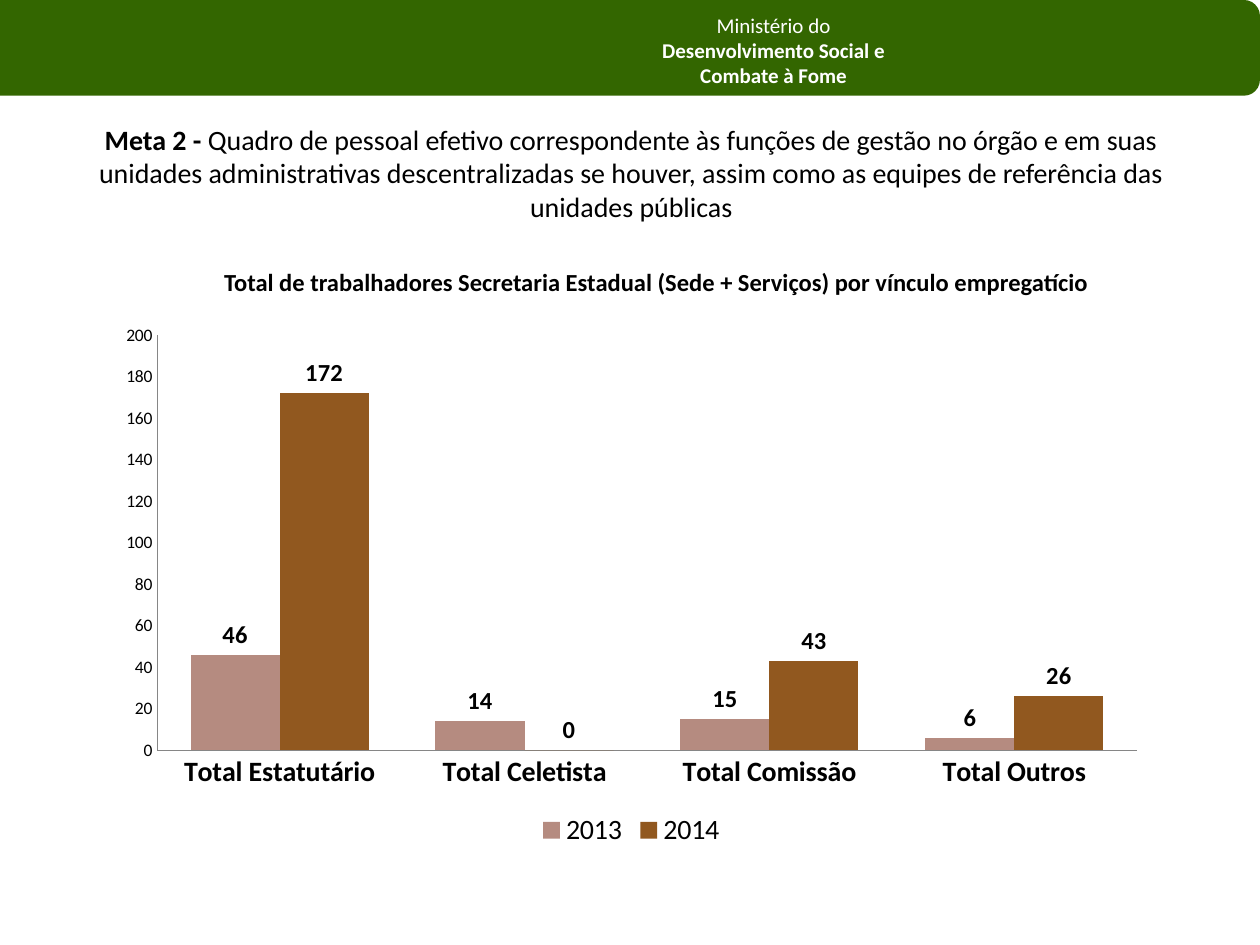
from lxml import etree
from pptx import Presentation
from pptx.chart.data import CategoryChartData
from pptx.dml.color import RGBColor
from pptx.enum.chart import XL_CHART_TYPE, XL_LABEL_POSITION, XL_LEGEND_POSITION, XL_TICK_MARK
from pptx.enum.shapes import MSO_SHAPE
from pptx.enum.text import MSO_ANCHOR, PP_ALIGN
from pptx.oxml.ns import qn
from pptx.util import Inches, Pt

COLUMN = XL_CHART_TYPE.COLUMN_CLUSTERED
OUTSIDE_END = XL_LABEL_POSITION.OUTSIDE_END
LEGEND_BOTTOM = XL_LEGEND_POSITION.BOTTOM
NO_TICK = XL_TICK_MARK.NONE
ROUNDED = MSO_SHAPE.ROUNDED_RECTANGLE
TOP = MSO_ANCHOR.TOP
LEFT, CENTER = PP_ALIGN.LEFT, PP_ALIGN.CENTER

FONT = "Calibri"
COLORS = {
    "banner": "336600",
    "white": "FFFFFF",
    "black": "000000",
    "axis": "868686",
    "2013": "B58B80",
    "2014": "91581F",
}
CATEGORIES = ["Total Estatutário", "Total Celetista", "Total Comissão", "Total Outros"]
STAFF = {"2013": [46, 14, 15, 6], "2014": [172, 0, 43, 26]}
PLOT_LAYOUT = {"x": 0.05, "y": 0.04, "w": 0.93, "h": 0.77}


def rgb(name):
    return RGBColor.from_string(COLORS[name])


def inches(box):
    return [Inches(length) for length in box]


def format_font(font, size, bold=False, color="black"):
    font.name = FONT
    font.size = Pt(size)
    font.bold = bold
    font.color.rgb = rgb(color)


def add_text(slide, box, paragraphs, size=14, color="black", align=LEFT):
    frame = slide.shapes.add_textbox(*inches(box)).text_frame
    frame.word_wrap = True
    frame.vertical_anchor = TOP
    for index, runs in enumerate(paragraphs):
        paragraph = frame.paragraphs[0] if index == 0 else frame.add_paragraph()
        paragraph.alignment = align
        for text, bold in runs:
            run = paragraph.add_run()
            run.text = text
            format_font(run.font, size, bold, color)


def add_banner(slide, box):
    banner = slide.shapes.add_shape(ROUNDED, *inches(box))
    banner.shadow.inherit = False
    banner.fill.solid()
    banner.fill.fore_color.rgb = rgb("banner")
    banner.line.fill.background()


def set_plot_layout(chart):
    plot_area = chart._chartSpace.find(".//" + qn("c:plotArea"))
    for layout in plot_area.findall(qn("c:layout")):
        plot_area.remove(layout)
    layout = etree.Element(qn("c:layout"))
    plot_area.insert(0, layout)
    manual = etree.SubElement(layout, qn("c:manualLayout"))
    settings = {"layoutTarget": "inner", "xMode": "edge", "yMode": "edge", **PLOT_LAYOUT}
    for tag, value in settings.items():
        etree.SubElement(manual, qn("c:" + tag)).set("val", str(value))


def format_axis(axis, size, bold=False):
    axis.has_major_gridlines = False
    axis.major_tick_mark = NO_TICK
    axis.minor_tick_mark = NO_TICK
    axis.format.line.color.rgb = rgb("axis")
    format_font(axis.tick_labels.font, size, bold)


def format_series(series):
    series.format.fill.solid()
    series.format.fill.fore_color.rgb = rgb(series.name)
    labels = series.data_labels
    labels.show_value = True
    labels.position = OUTSIDE_END
    format_font(labels.font, 14, bold=True)


def add_staff_chart(slide, box):
    data = CategoryChartData()
    data.categories = CATEGORIES
    for year, values in STAFF.items():
        data.add_series(year, values)
    chart = slide.shapes.add_chart(COLUMN, *inches(box), data).chart
    chart.has_title = False
    format_font(chart.font, 10)
    format_axis(chart.category_axis, 16, bold=True)
    format_axis(chart.value_axis, 10)
    chart.value_axis.minimum_scale = 0
    chart.value_axis.maximum_scale = 200
    chart.value_axis.major_unit = 20
    plot = chart.plots[0]
    plot.gap_width = 75
    plot.overlap = 0
    plot.vary_by_categories = False
    for series in plot.series:
        format_series(series)
    chart.has_legend = True
    chart.legend.position = LEGEND_BOTTOM
    chart.legend.include_in_layout = False
    format_font(chart.legend.font, 16)
    set_plot_layout(chart)


def main():
    presentation = Presentation()
    presentation.slide_width = Inches(10)
    presentation.slide_height = Inches(7.5)
    slide = presentation.slides.add_slide(presentation.slide_layouts[6])

    add_banner(slide, (-0.2, 0, 10.2, 0.76))
    add_text(
        slide, (4.84, 0.05, 2.6, 0.71),
        [[("Ministério do", False)],
         [("Desenvolvimento Social e", True)],
         [("Combate à Fome", True)]],
        size=12, color="white", align=CENTER)
    add_text(
        slide, (0.51, 0.92, 9, 1.25),
        [[("Meta 2 - ", True),
          ("Quadro de pessoal efetivo correspondente às funções de gestão no órgão "
           "e em suas unidades administrativas descentralizadas se houver, assim como "
           "as equipes de referência das unidades públicas", False)]],
        size=16, align=CENTER)
    add_staff_chart(slide, (0.83, 2.49, 8.36, 4.28))
    add_text(
        slide, (1.68, 2.07, 7.25, 0.34),
        [[("Total de trabalhadores Secretaria Estadual (Sede + Serviços) "
           "por vínculo empregatício", True)]])
    presentation.save("out.pptx")


if __name__ == "__main__":
    main()
